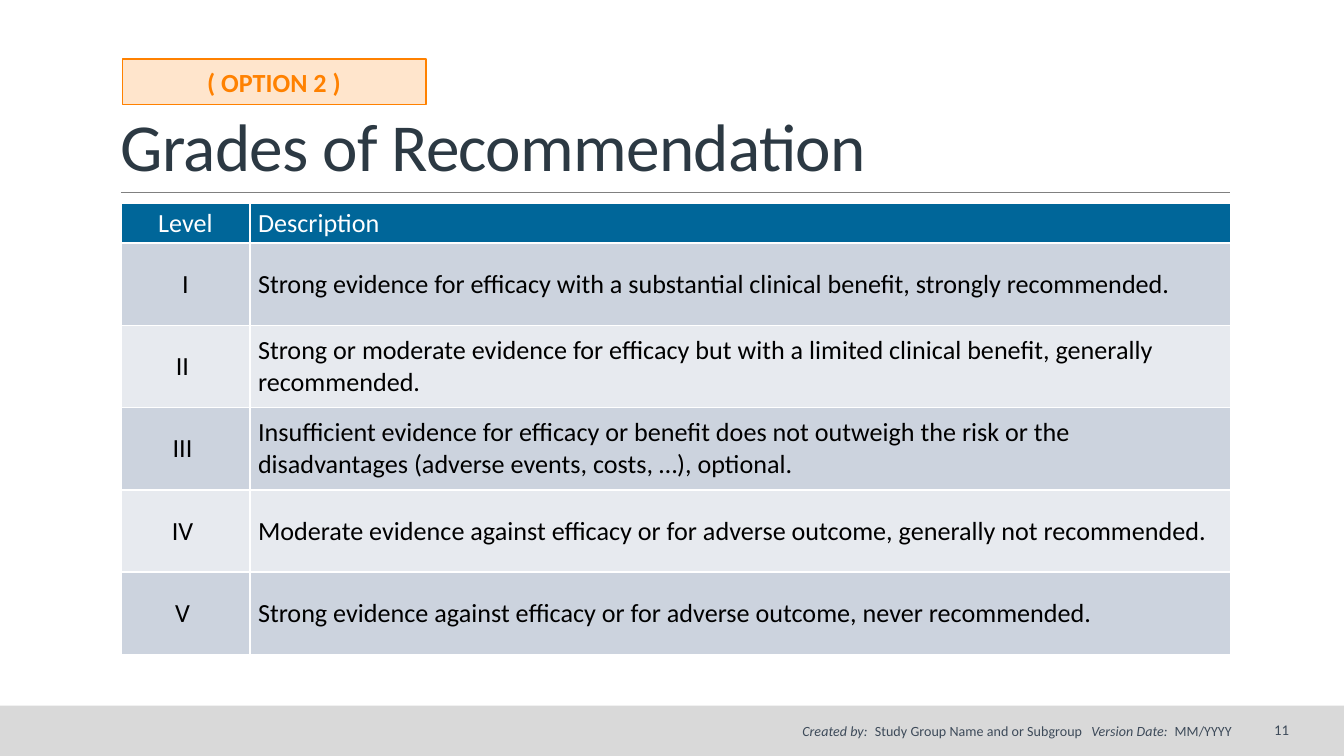
from dataclasses import dataclass

from lxml.etree import SubElement
from pptx import Presentation
from pptx.dml.color import RGBColor
from pptx.enum.shapes import MSO_CONNECTOR, MSO_SHAPE
from pptx.enum.text import MSO_ANCHOR as Anchor, MSO_AUTO_SIZE as AutoSize, PP_ALIGN as Align
from pptx.oxml.ns import qn
from pptx.util import Inches, Pt


@dataclass(frozen=True)
class Theme:
    font: str = "Calibri"
    title: str = "2C3943"
    footer: str = "3D4A59"
    footer_band: str = "D9D9D9"
    rule: str = "808080"
    accent: str = "FF8100"
    header: str = "006699"
    bands: tuple = ("CCD3DE", "E7EAEF")
    white: str = "FFFFFF"
    black: str = "000000"
    title_size: float = 36
    body_size: float = 14
    number_size: float = 7.9
    footer_size: float = 7.5


THEME = Theme()
ROWS = [
    ("Level", "Description"),
    ("I", "Strong evidence for efficacy with a substantial clinical benefit, strongly recommended."),
    ("II ", "Strong or moderate evidence for efficacy but with a limited clinical benefit, "
            "generally recommended."),
    ("III ", "Insufficient evidence for efficacy or benefit does not outweigh the risk or the "
             "disadvantages (adverse events, costs, …), optional."),
    ("IV ", "Moderate evidence against efficacy or for adverse outcome, generally not recommended."),
    ("V ", "Strong evidence against efficacy or for adverse outcome, never recommended."),
]
TABLE_HEIGHT = 3.36
HEADER_HEIGHT = 0.3
ROW_HEIGHT = (TABLE_HEIGHT - HEADER_HEIGHT) / (len(ROWS) - 1)
FOOTER = ["Created by:", "\tStudy Group Name and or Subgroup", "\tVersion Date:", "\tMM/YYYY"]
FOOTER_TABS = (0.54, 2.15, 2.77)


def apply_format(target, values):
    for name, value in values.items():
        setattr(target, name, value)


def box(left, top, width, height):
    return [Inches(value) for value in (left, top, width, height)]


def set_fill(target, color):
    target.fill.solid()
    target.fill.fore_color.rgb = RGBColor.from_string(color)


def add_run(paragraph, text, size, color, **values):
    run = paragraph.add_run()
    run.text = text
    apply_format(run.font, {"name": THEME.font, "size": Pt(size), **values})
    run.font.color.rgb = RGBColor.from_string(color)
    return run


def add_rectangle(slide, place, color):
    shape = slide.shapes.add_shape(MSO_SHAPE.RECTANGLE, *place)
    shape.shadow.inherit = False
    set_fill(shape, color)
    shape.line.fill.background()
    return shape


def add_rule(slide, left, right, top):
    rule = slide.shapes.add_connector(
        MSO_CONNECTOR.STRAIGHT, Inches(left), Inches(top), Inches(right), Inches(top))
    rule.line.color.rgb = RGBColor.from_string(THEME.rule)
    rule.line.width = Pt(0.5)
    SubElement(rule._element.spPr, qn("a:effectLst"))


def add_title(slide, text):
    title = slide.shapes.title
    places = box(0.9, 0.24, 8.25, 1.19)
    apply_format(title, dict(zip(("left", "top", "width", "height"), places)))
    frame = title.text_frame
    apply_format(frame, {
        "margin_left": 0, "margin_right": 0, "margin_top": Inches(0.05),
        "margin_bottom": Inches(0.05), "vertical_anchor": Anchor.BOTTOM,
        "word_wrap": True, "auto_size": AutoSize.NONE})
    paragraph = frame.paragraphs[0]
    apply_format(paragraph, {"alignment": Align.LEFT, "line_spacing": 0.85})
    run = add_run(paragraph, text, THEME.title_size, THEME.title)
    run.font._element.set("spc", "-40")


def add_text_box(slide, place, alignment, **values):
    frame = slide.shapes.add_textbox(*place).text_frame
    apply_format(frame, {"word_wrap": True, **values})
    paragraph = frame.paragraphs[0]
    paragraph.alignment = alignment
    return paragraph


def add_footer(slide):
    paragraph = add_text_box(slide, box(4.33, 5.33, 4.93, 0.3), Align.LEFT,
                             margin_left=Inches(1.64), margin_right=0)
    tabs = SubElement(paragraph._p.get_or_add_pPr(), qn("a:tabLst"))
    for position in FOOTER_TABS:
        SubElement(tabs, qn("a:tab"), pos=str(Inches(position)), algn="l")
    for index, text in enumerate(FOOTER):
        add_run(paragraph, text, THEME.footer_size, THEME.footer, italic=index % 2 == 0)


def add_slide_number(slide, text):
    paragraph = add_text_box(slide, box(9.06, 5.28, 0.63, 0.3), Align.RIGHT,
                             vertical_anchor=Anchor.MIDDLE)
    add_run(paragraph, text, THEME.number_size, THEME.footer)


def add_option_tag(slide, text):
    tag = add_rectangle(slide, box(0.91, 0.44, 2.26, 0.34), THEME.accent)
    color = tag._element.spPr.find(qn("a:solidFill"))[0]
    SubElement(color, qn("a:alpha"), val="20000")
    tag.line.color.rgb = RGBColor.from_string(THEME.accent)
    tag.line.width = Pt(0.75)
    apply_format(tag.text_frame, {"word_wrap": True, "auto_size": AutoSize.SHAPE_TO_FIT_TEXT})
    paragraph = tag.text_frame.paragraphs[0]
    paragraph.alignment = Align.CENTER
    add_run(paragraph, text, THEME.body_size, THEME.accent, bold=True)


def set_borders(cell):
    properties = cell._tc.get_or_add_tcPr()
    for index, side in enumerate(("lnL", "lnR", "lnT", "lnB")):
        line = properties.makeelement(qn(f"a:{side}"), {"w": str(Pt(1))})
        properties.insert(index, line)
        SubElement(SubElement(line, qn("a:solidFill")), qn("a:srgbClr"), val=THEME.white)


def fill_cell(cell, text, alignment, fill, color):
    set_fill(cell, fill)
    set_borders(cell)
    apply_format(cell, {
        "vertical_anchor": Anchor.MIDDLE, "margin_left": Inches(0.06),
        "margin_right": Inches(0.06), "margin_top": Inches(0.03),
        "margin_bottom": Inches(0.03)})
    paragraph = cell.text_frame.paragraphs[0]
    paragraph.alignment = alignment
    add_run(paragraph, text, THEME.body_size, color, bold=False)


def add_grades_table(slide):
    frame = slide.shapes.add_table(len(ROWS), 2, *box(0.9, 1.51, 8.26, TABLE_HEIGHT))
    table = frame.table
    for column, width in zip(table.columns, (0.96, 7.3)):
        column.width = Inches(width)
    for index, texts in enumerate(ROWS):
        header = index == 0
        table.rows[index].height = Inches(HEADER_HEIGHT if header else ROW_HEIGHT)
        fill = THEME.header if header else THEME.bands[(index - 1) % 2]
        color = THEME.white if header else THEME.black
        for column, alignment in enumerate((Align.CENTER, Align.LEFT)):
            fill_cell(table.cell(index, column), texts[column], alignment, fill, color)


def main():
    presentation = Presentation()
    presentation.slide_width = Inches(10)
    presentation.slide_height = Inches(10 * 9 / 16)
    slide = presentation.slides.add_slide(presentation.slide_layouts[5])
    add_rectangle(slide, box(0, 5.25, 10, 0.38), THEME.footer_band)
    add_rule(slide, 0.9, 9.15, 1.43)
    add_title(slide, "Grades of Recommendation")
    add_slide_number(slide, "11")
    add_grades_table(slide)
    add_footer(slide)
    add_option_tag(slide, "( OPTION 2 )")
    presentation.save("out.pptx")


if __name__ == "__main__":
    main()
